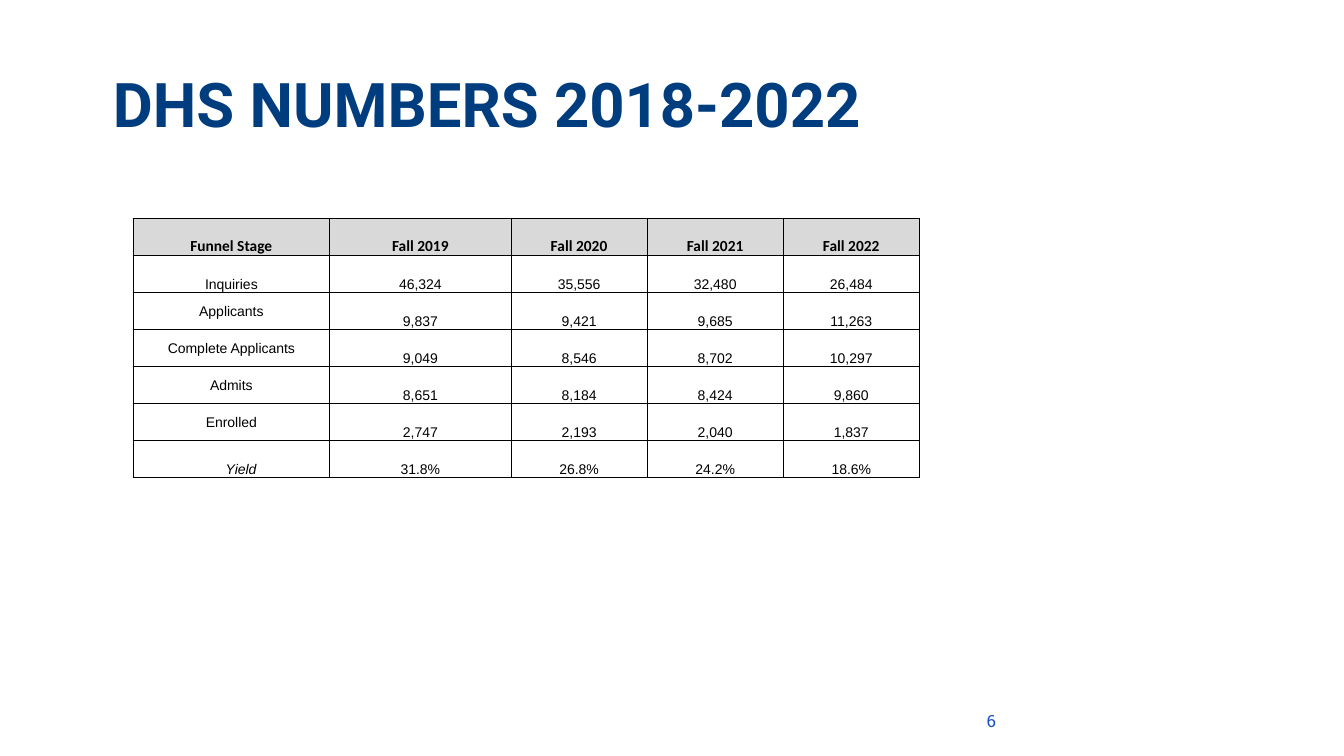
from lxml import etree
from pptx import Presentation
from pptx.dml.color import RGBColor
from pptx.enum import text
from pptx.oxml import ns
from pptx.util import Pt

HEADING = "DHS NUMBERS 2018-2022"
PAGE_NUMBER = "6"
FUNNEL = [
    ("Funnel Stage", "Fall 2019", "Fall 2020", "Fall 2021", "Fall 2022"),
    ("Inquiries", "46,324", "35,556", "32,480", "26,484"),
    ("Applicants", "9,837", "9,421", "9,685", "11,263"),
    ("Complete Applicants", "9,049", "8,546", "8,702", "10,297"),
    ("Admits", "8,651", "8,184", "8,424", "9,860"),
    ("Enrolled", "2,747", "2,193", "2,040", "1,837"),
    ("Yield", "31.8%", "26.8%", "24.2%", "18.6%"),
]
MIDDLE_STAGES = {"Applicants", "Complete Applicants", "Admits", "Enrolled"}
COLUMN_WIDTHS = [140.4, 129.6, 97.2, 97.2, 97.2]
ROW_HEIGHT = 26.43
YIELD_INDENT = 14.6

HEADING_FONT = {"name": "Roboto", "size": Pt(44), "bold": True}
PAGE_FONT = {"name": "Roboto Slab", "size": Pt(12), "bold": False}
HEADER_FONT = {"name": "Calibri", "size": Pt(11), "bold": True}
BODY_FONT = {"name": "Arial", "size": Pt(10), "bold": False}
NO_MARGINS = dict.fromkeys(
    ("margin_left", "margin_top", "margin_right", "margin_bottom"), 0)
CELL_MARGINS = {"margin_left": Pt(0.7), "margin_top": Pt(0.7),
                "margin_right": Pt(0.7), "margin_bottom": 0}


def color(value):
    return RGBColor.from_string(value)


def assign(target, values):
    for key, value in values.items():
        setattr(target, key, value)


def write(frame, words, font, ink, align):
    paragraph = frame.paragraphs[0]
    paragraph.alignment = align
    run = paragraph.add_run()
    run.text = words
    assign(run.font, font)
    run.font.color.rgb = color(ink)
    return paragraph


def add_borders(cell):
    properties = cell._tc.get_or_add_tcPr()
    for index, side in enumerate(("lnL", "lnR", "lnT", "lnB")):
        border = etree.Element(ns.qn(f"a:{side}"), w=str(Pt(0.5)))
        fill = etree.SubElement(border, ns.qn("a:solidFill"))
        etree.SubElement(fill, ns.qn("a:srgbClr"), val="000000")
        properties.insert(index, border)


def add_heading(slide):
    heading = slide.shapes.title
    assign(heading, {"left": Pt(80.64), "top": Pt(51.12),
                     "width": Pt(794.88), "height": Pt(49.68)})
    assign(heading.text_frame, {
        **NO_MARGINS, "word_wrap": True, "auto_size": text.MSO_AUTO_SIZE.NONE,
        "vertical_anchor": text.MSO_ANCHOR.BOTTOM})
    line = write(heading.text_frame, HEADING, HEADING_FONT, "003D7E",
                 text.PP_ALIGN.LEFT)
    line.line_spacing = 0.9


def add_funnel(slide):
    frame = slide.shapes.add_table(
        len(FUNNEL), len(COLUMN_WIDTHS), Pt(95.04), Pt(156.24),
        Pt(sum(COLUMN_WIDTHS)), Pt(ROW_HEIGHT * len(FUNNEL)))
    funnel = frame.table
    funnel.horz_banding = False
    for column, width in zip(funnel.columns, COLUMN_WIDTHS):
        column.width = Pt(width)
    for r, values in enumerate(FUNNEL):
        funnel.rows[r].height = Pt(ROW_HEIGHT)
        for c, value in enumerate(values):
            cell = funnel.cell(r, c)
            assign(cell, CELL_MARGINS)
            cell.vertical_anchor = (text.MSO_ANCHOR.MIDDLE if value in MIDDLE_STAGES
                                    else text.MSO_ANCHOR.BOTTOM)
            if r == 0:
                cell.fill.solid()
                cell.fill.fore_color.rgb = color("D9D9D9")
            else:
                cell.fill.background()
            line = write(cell.text_frame, value, HEADER_FONT if r == 0 else BODY_FONT,
                         "000000", text.PP_ALIGN.CENTER)
            if value == "Yield":
                cell.margin_left = Pt(YIELD_INDENT)
                line.runs[0].font.italic = True
            add_borders(cell)


def add_page_number(slide):
    page = slide.shapes.add_textbox(Pt(495.36), Pt(500.4), Pt(216), Pt(28.8))
    assign(page.text_frame, {**NO_MARGINS, "word_wrap": True,
                             "vertical_anchor": text.MSO_ANCHOR.MIDDLE})
    write(page.text_frame, PAGE_NUMBER, PAGE_FONT, "134FC9", text.PP_ALIGN.RIGHT)


def main():
    deck = Presentation()
    assign(deck, {"slide_width": Pt(960), "slide_height": Pt(540)})
    slide = deck.slides.add_slide(deck.slide_layouts[5])
    add_page_number(slide)
    add_heading(slide)
    add_funnel(slide)
    deck.save("out.pptx")


if __name__ == "__main__":
    main()
